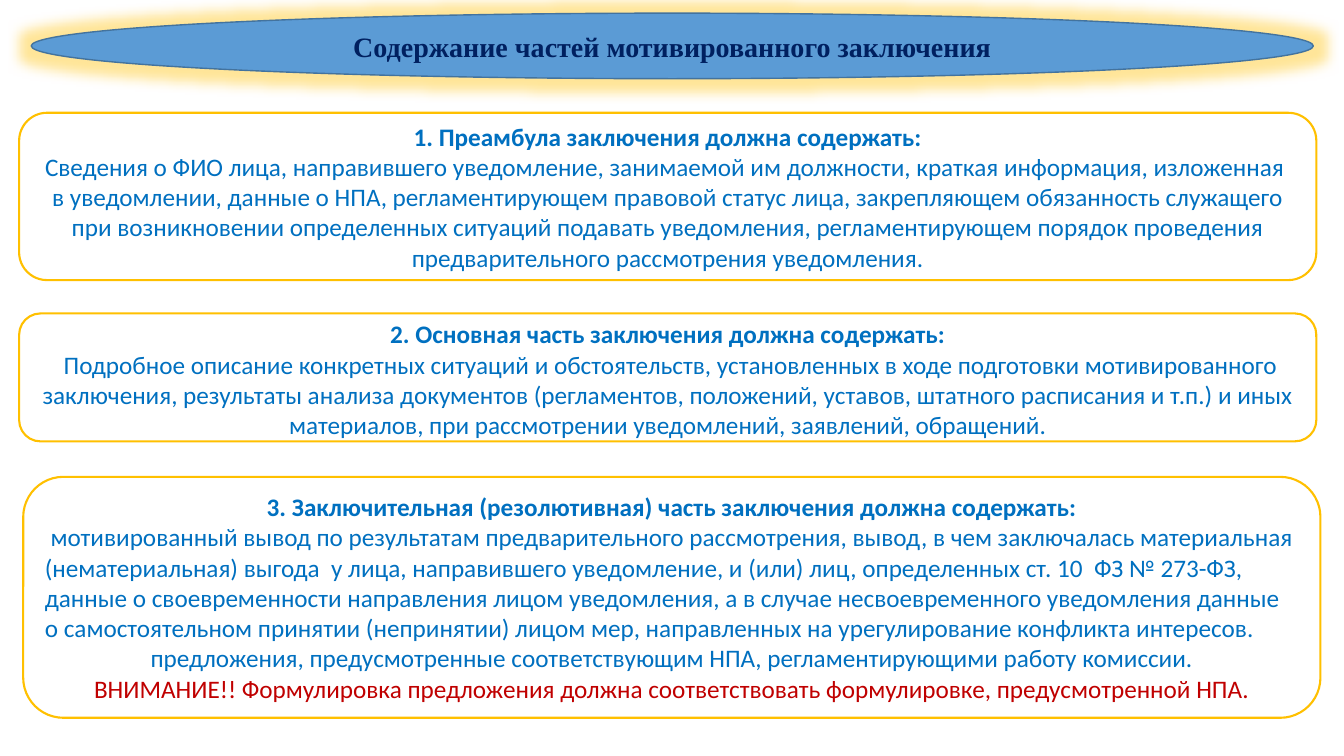
from lxml.etree import SubElement
from pptx import Presentation
from pptx.dml.color import RGBColor
from pptx.enum.shapes import MSO_SHAPE as Shape
from pptx.enum.text import MSO_ANCHOR as Anchor, PP_ALIGN as Align
from pptx.oxml.ns import qn
from pptx.util import Pt

WHITE = RGBColor(0xFF, 0xFF, 0xFF)
GOLD = RGBColor(0xFF, 0xC0, 0x00)
BLUE = RGBColor(0x00, 0x70, 0xC0)
RED = RGBColor(0xC0, 0x00, 0x00)
NAVY = RGBColor(0x00, 0x20, 0x60)
BANNER_FILL = RGBColor(0x5B, 0x9B, 0xD5)
BANNER_LINE = RGBColor(0x43, 0x73, 0x9E)

TITLE = "Содержание частей мотивированного заключения"

PREAMBLE = [
    ("1. Преамбула заключения должна содержать:", BLUE, True, Align.CENTER),
    ("Сведения о ФИО лица, направившего уведомление, занимаемой им должности, "
     "краткая информация, изложенная \nв уведомлении, данные о НПА, "
     "регламентирующем правовой статус лица, закрепляющем обязанность служащего "
     "при возникновении определенных ситуаций подавать уведомления, "
     "регламентирующем порядок проведения предварительного рассмотрения "
     "уведомления.", BLUE, False, Align.CENTER),
]
MAIN_PART = [
    ("2. Основная часть заключения должна содержать:", BLUE, True, Align.CENTER),
    (" Подробное описание конкретных ситуаций и обстоятельств, установленных в "
     "ходе подготовки мотивированного заключения, результаты анализа документов "
     "(регламентов, положений, уставов, штатного расписания и т.п.) и иных "
     "материалов, при рассмотрении уведомлений, заявлений, обращений.",
     BLUE, False, Align.CENTER),
]
FINAL_PART = [
    ("3. Заключительная (резолютивная) часть заключения должна содержать:",
     BLUE, True, Align.CENTER),
    (" мотивированный вывод по результатам предварительного рассмотрения, вывод, "
     "в чем заключалась материальная (нематериальная) выгода  у лица, "
     "направившего уведомление, и (или) лиц, определенных ст. 10  ФЗ № 273-ФЗ, "
     "данные о своевременности направления лицом уведомления, а в случае "
     "несвоевременного уведомления данные о самостоятельном принятии "
     "(непринятии) лицом мер, направленных на урегулирование конфликта "
     "интересов.", BLUE, False, Align.LEFT),
    ("предложения, предусмотренные соответствующим НПА, регламентирующими работу "
     "комиссии.", BLUE, False, Align.CENTER),
    ("ВНИМАНИЕ!! Формулировка предложения должна соответствовать формулировке, "
     "предусмотренной НПА.", RED, False, Align.CENTER),
]


def add_outlined(slide, preset, left, top, width, height, fill, line, weight):
    outlined = slide.shapes.add_shape(
        preset, Pt(left), Pt(top), Pt(width), Pt(height))
    outlined.shadow.inherit = False
    outlined.fill.solid()
    outlined.fill.fore_color.rgb = fill
    outlined.line.color.rgb = line
    outlined.line.width = Pt(weight)
    outlined.text_frame.word_wrap = True
    outlined.text_frame.vertical_anchor = Anchor.MIDDLE
    return outlined


def add_run(paragraph, text, font_name, size, color, bold):
    run = paragraph.add_run()
    run.text = text
    run.font.name = font_name
    run.font.size = Pt(size)
    run.font.color.rgb = color
    run.font.bold = bold


def add_glow(banner, color, radius, opacity):
    effects = banner.element.spPr.find(qn("a:effectLst"))
    glow = SubElement(effects, qn("a:glow"), rad=str(Pt(radius)))
    tint = SubElement(glow, qn("a:srgbClr"), val=str(color))
    SubElement(tint, qn("a:alpha"), val=str(opacity * 1000))


def add_banner(slide):
    banner = add_outlined(slide, Shape.OVAL, 22.3, 9.4, 915.8, 46.8,
                          BANNER_FILL, BANNER_LINE, 1)
    add_glow(banner, GOLD, 18, 40)
    heading = banner.text_frame.paragraphs[0]
    heading.alignment = Align.CENTER
    add_run(heading, TITLE, "Times New Roman", 20, NAVY, True)


def add_section(slide, left, top, height, content, inset_top=3.6):
    section = add_outlined(slide, Shape.ROUNDED_RECTANGLE, left, top, 926.6,
                           height, WHITE, GOLD, 1.5)
    frame = section.text_frame
    frame.margin_top = Pt(inset_top)
    for index, (text, color, bold, alignment) in enumerate(content):
        paragraph = frame.add_paragraph() if index else frame.paragraphs[0]
        paragraph.alignment = alignment
        for number, part in enumerate(text.split("\n")):
            if number:
                paragraph.add_line_break()
            add_run(paragraph, part, "Calibri", 18, color, bold)


def main():
    presentation = Presentation()
    presentation.slide_width = Pt(960)
    presentation.slide_height = Pt(540)
    slide = presentation.slides.add_slide(presentation.slide_layouts[6])
    add_section(slide, 13.7, 80.6, 119.5, PREAMBLE)
    add_banner(slide)
    add_section(slide, 13.7, 223.9, 91.4, MAIN_PART, inset_top=6)
    add_section(slide, 16.6, 340.6, 172.1, FINAL_PART)
    presentation.save("out.pptx")


if __name__ == "__main__":
    main()
